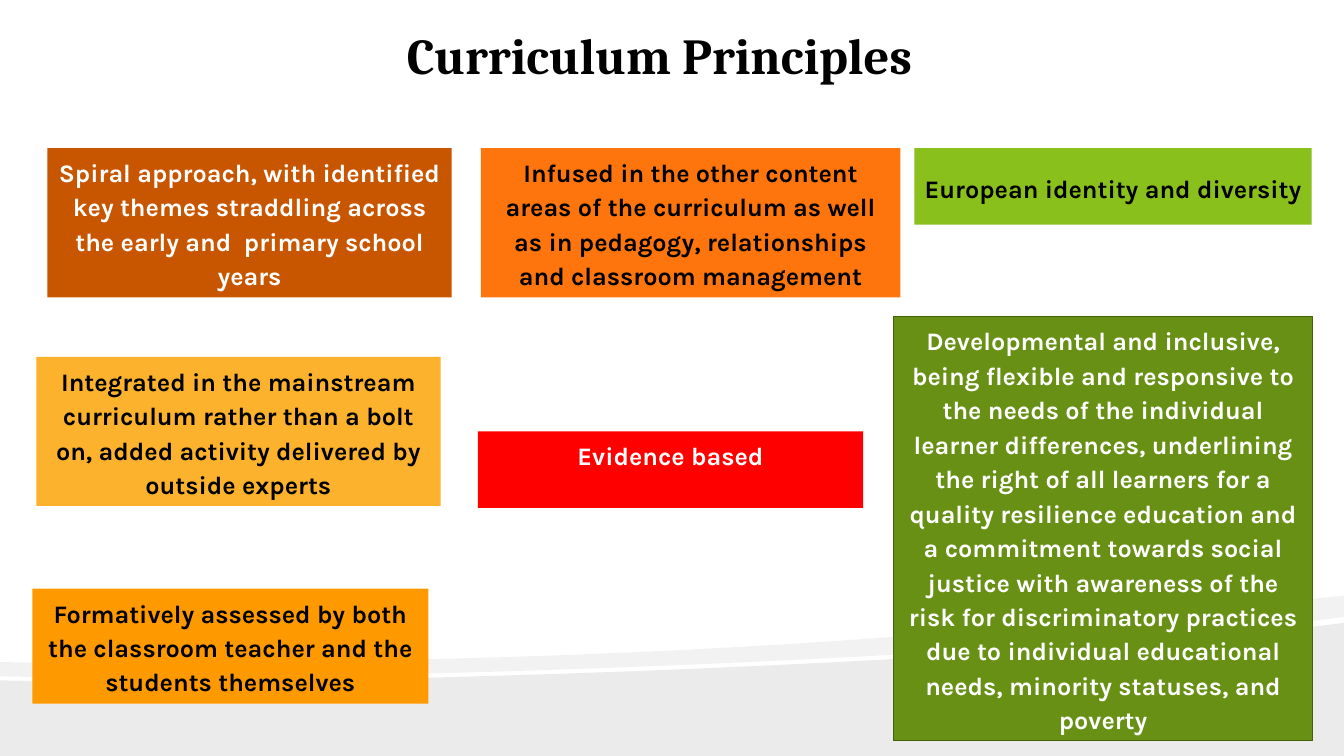
from dataclasses import dataclass
from typing import NamedTuple, Optional

from lxml.etree import SubElement
from pptx import Presentation
from pptx.dml.color import RGBColor as Rgb
from pptx.enum.shapes import MSO_SHAPE as Shape
from pptx.enum.text import MSO_ANCHOR as Anchor, PP_ALIGN as Align
from pptx.oxml.ns import qn
from pptx.util import Inches, Pt

COLORS = {
    "black": "000000", "white": "FFFFFF", "lime": "89C01C", "amber": "FCB22C",
    "orange": "FE750E", "gold": "FF9900", "rust": "C85601", "green": "679015",
    "dark green": "44600E", "red": "FF0000",
}
WIDTH, HEIGHT = Inches(13.33), Inches(7.5)
CURVE_STEPS = 24


class Point(NamedTuple):
    """A place in percent of the slide's width and height."""
    x: float
    y: float


class Area(NamedTuple):
    """A rectangle in percent of the slide's width and height."""
    left: float
    top: float
    width: float
    height: float


@dataclass
class Principle:
    text: str
    area: Area
    fill: str
    ink: str = "black"
    anchor: Anchor = Anchor.TOP
    outline: Optional[str] = None


@dataclass
class Wave:
    """Each segment is one point for a line, or three for a cubic curve."""
    start: Point
    segments: list[list[Point]]
    opacity: int


WAVES = [
    Wave(Point(100, 82.4), [
        [Point(100, 100)], [Point(0, 100)], [Point(0, 90)],
        [Point(26.41, 91.07), Point(78.17, 87.33), Point(100, 82.4)],
    ], 8),
    Wave(Point(100, 78.8), [
        [Point(100, 81.6)],
        [Point(94.15, 83.07), Point(86.2, 84.4), Point(77.19, 85.47)],
        [Point(52.36, 88.4), Point(19.35, 90.27), Point(0, 89.47)],
        [Point(0, 87.6)],
        [Point(48.91, 88.27), Point(72.84, 83.6), Point(100, 78.8)],
    ], 5),
]

TITLE_AREA = Area(5.93, 2.53, 86.27, 19.33)
TITLE_FORMAT = {"name": "Cambria", "size": Pt(36), "bold": True}
PRINCIPLE_FORMAT = {"name": "Karla", "size": Pt(18), "bold": True}

PRINCIPLES = [
    Principle("European identity and diversity",
              Area(68.04, 19.6, 29.56, 10.13), "lime", anchor=Anchor.MIDDLE),
    Principle("Integrated in the mainstream curriculum rather than a bolt on, "
              "added activity delivered by outside experts",
              Area(2.7, 47.2, 30.08, 19.73), "amber"),
    Principle("Infused in the other content areas of the curriculum as well as "
              "in pedagogy, relationships and classroom management",
              Area(35.78, 19.6, 31.21, 19.73), "orange"),
    Principle("Formatively assessed by both the classroom teacher and the "
              "students themselves",
              Area(2.4, 77.87, 29.48, 15.2), "gold"),
    Principle("Spiral approach, with identified key themes straddling across "
              "the early and  primary school years",
              Area(3.53, 19.6, 30.08, 19.73), "rust", "white"),
    Principle("Developmental and inclusive, being flexible and responsive to "
              "the needs of the individual learner differences, underlining "
              "the right of all learners for a quality resilience education "
              "and a commitment towards social justice with awareness of the "
              "risk for discriminatory practices due to individual educational "
              "needs, minority statuses, and poverty",
              Area(66.47, 41.87, 31.21, 56.13), "green", "white",
              outline="dark green"),
    Principle("Evidence based",
              Area(35.56, 57.07, 28.66, 10.13), "red", "white"),
]


def color(name: str) -> Rgb:
    return Rgb.from_string(COLORS[name])


def to_slide(x: float, y: float) -> tuple[int, int]:
    return round(WIDTH * x / 100), round(HEIGHT * y / 100)


def place(area: Area) -> tuple[int, ...]:
    return to_slide(area.left, area.top) + to_slide(area.width, area.height)


def curve(start: Point, first: Point, second: Point, end: Point) -> list[Point]:
    """Sample a cubic Bezier curve."""
    points = []
    for step in range(1, CURVE_STEPS + 1):
        t = step / CURVE_STEPS
        weights = ((1 - t) ** 3, 3 * t * (1 - t) ** 2, 3 * t * t * (1 - t), t ** 3)
        pairs = list(zip(weights, (start, first, second, end)))
        points.append(Point(sum(w * p.x for w, p in pairs),
                            sum(w * p.y for w, p in pairs)))
    return points


def draw_wave(slide, wave: Wave) -> None:
    points = [wave.start]
    for segment in wave.segments:
        points += curve(points[-1], *segment) if len(segment) == 3 else segment
    builder = slide.shapes.build_freeform(*to_slide(*wave.start))
    builder.add_line_segments([to_slide(*point) for point in points[1:]], close=True)
    shape = builder.convert_to_shape()
    shape.shadow.inherit = False
    shape.line.fill.background()
    shape.fill.solid()
    shape.fill.fore_color.rgb = color("black")
    solid_color = shape._element.spPr.find(f".//{qn('a:srgbClr')}")
    SubElement(solid_color, qn("a:alpha"), val=str(wave.opacity * 1000))


def write(shape, text: str, ink: str, font_format: dict, anchor: Anchor,
          line_spacing: float = 1.0) -> None:
    frame = shape.text_frame
    frame.word_wrap = True
    frame.vertical_anchor = anchor
    paragraph = frame.paragraphs[0]
    paragraph.alignment = Align.CENTER
    paragraph.line_spacing = line_spacing
    run = paragraph.add_run()
    run.text = text
    for attribute, value in font_format.items():
        setattr(run.font, attribute, value)
    run.font.color.rgb = color(ink)


def draw_principle(slide, principle: Principle) -> None:
    shape = slide.shapes.add_shape(Shape.RECTANGLE, *place(principle.area))
    shape.shadow.inherit = False
    shape.fill.solid()
    shape.fill.fore_color.rgb = color(principle.fill)
    if principle.outline:
        shape.line.color.rgb = color(principle.outline)
        shape.line.width = Pt(0.75)
    else:
        shape.line.fill.background()
    write(shape, principle.text, principle.ink, PRINCIPLE_FORMAT,
          principle.anchor, 1.14)


def main() -> None:
    presentation = Presentation()
    presentation.slide_width, presentation.slide_height = WIDTH, HEIGHT
    slide = presentation.slides.add_slide(presentation.slide_layouts[6])

    # Grey waves along the bottom
    for wave in WAVES:
        draw_wave(slide, wave)

    # Title
    title = slide.shapes.add_textbox(*place(TITLE_AREA))
    write(title, "Curriculum Principles", "black", TITLE_FORMAT, Anchor.TOP)

    # Coloured boxes, one for each principle
    for principle in PRINCIPLES:
        draw_principle(slide, principle)

    presentation.save("out.pptx")


if __name__ == "__main__":
    main()
